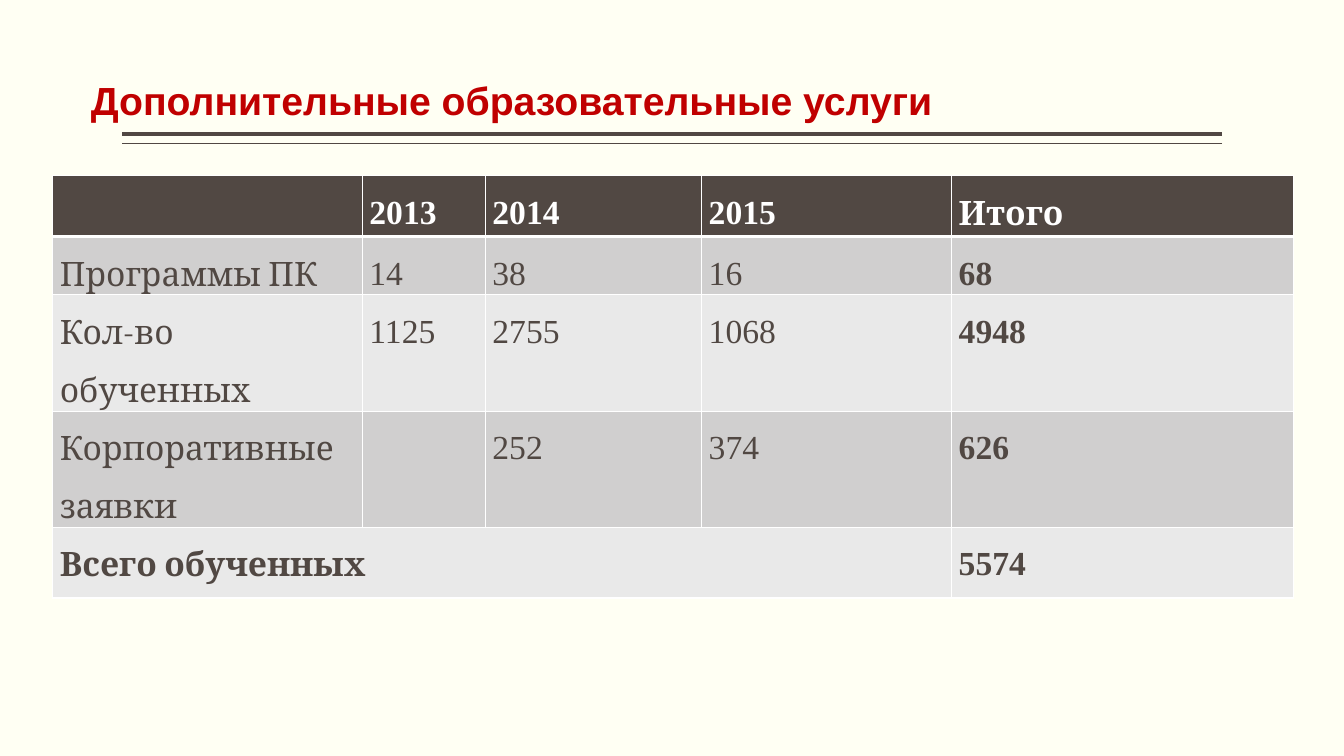
from lxml.etree import SubElement
from pptx import Presentation
from pptx.dml.color import RGBColor
from pptx.enum.text import MSO_ANCHOR, MSO_AUTO_SIZE, PP_ALIGN
from pptx.enum.shapes import MSO_CONNECTOR
from pptx.oxml.ns import qn
from pptx.util import Cm, Pt

CREAM = RGBColor(0xFF, 0xFF, 0xF3)
BROWN = RGBColor(0x51, 0x48, 0x43)
RED = RGBColor(0xC0, 0x00, 0x00)
WHITE = RGBColor(0xFF, 0xFF, 0xFF)
DARK_BAND = RGBColor(0xD0, 0xCF, 0xCF)
LIGHT_BAND = RGBColor(0xE9, 0xE9, 0xE9)

SERVICES = [
    ["", "2013", "2014", "2015", "Итого"],
    ["Программы ПК", "14", "38", "16", "68"],
    ["Кол-во обученных", "1125", "2755", "1068", "4948"],
    ["Корпоративные заявки", "", "252", "374", "626"],
    ["Всего обученных", "", "", "", "5574"],
]
COLUMN_WIDTHS = [7.8, 3.1, 5.45, 6.3, 8.62]
ROW_HEIGHTS = [1.53, 1.47, 2.93, 2.93, 1.78]


def apply(target, values):
    for name, value in values.items():
        setattr(target, name, value)


class ServicesSlide:
    """Holds the style and the current slide."""

    heading_font = "Arial"
    word_font = "Cambria"
    number_font = "Times New Roman"

    def __init__(self, presentation):
        self.slide = presentation.slides.add_slide(presentation.slide_layouts[5])
        self.slide.background.fill.solid()
        self.slide.background.fill.fore_color.rgb = CREAM

    def label(self, frame, text, font, size, color, bold, **paragraph_format):
        paragraph = frame.paragraphs[0]
        apply(paragraph, paragraph_format)
        run = paragraph.add_run()
        run.text = text
        apply(run.font, {"name": font, "size": Pt(size), "bold": bold})
        run.font.color.rgb = color

    def title(self, text, left, top, width, height):
        heading = self.slide.shapes.title
        apply(heading, {"left": Cm(left), "top": Cm(top),
                        "width": Cm(width), "height": Cm(height)})
        apply(heading.text_frame, {
            "vertical_anchor": MSO_ANCHOR.BOTTOM, "word_wrap": True,
            "auto_size": MSO_AUTO_SIZE.NONE, "margin_left": 0, "margin_right": 0,
        })
        self.label(heading.text_frame, text, self.heading_font, 28, RED, True,
                   alignment=PP_ALIGN.LEFT, line_spacing=0.9)

    def rule(self, left, right, y, weight):
        rule = self.slide.shapes.add_connector(
            MSO_CONNECTOR.STRAIGHT, Cm(right), Cm(y), Cm(left), Cm(y))
        rule.line.color.rgb = BROWN
        rule.line.width = Pt(weight)
        SubElement(rule._element.spPr, qn("a:effectLst"))

    def borders(self, cell, top, bottom):
        properties = cell._tc.get_or_add_tcPr()
        for side, weight in {"L": 1, "R": 1, "T": top, "B": bottom}.items():
            edge = SubElement(properties, qn(f"a:ln{side}"), w=str(Pt(weight)))
            paint = SubElement(edge, qn("a:solidFill"))
            SubElement(paint, qn("a:srgbClr"), val=str(WHITE))

    def cell(self, cell, text, row, column):
        header = row == 0
        last_column = len(COLUMN_WIDTHS) - 1
        last_row = len(ROW_HEIGHTS) - 1
        apply(cell, {"margin_left": Cm(0.18), "margin_right": Cm(0.18),
                     "margin_top": 0, "margin_bottom": 0})
        self.borders(cell, top=3 if row == 1 else 1, bottom=3 if header else 1)
        cell.fill.solid()
        cell.fill.fore_color.rgb = (
            BROWN if header else DARK_BAND if row % 2 else LIGHT_BAND)
        if text:
            self.label(cell.text_frame, text,
                       self.number_font if text.isdigit() else self.word_font,
                       24, WHITE if header else BROWN,
                       header or row == last_row or column == last_column,
                       alignment=PP_ALIGN.JUSTIFY, line_spacing=1.5)

    def table(self, rows, left, top):
        table = self.slide.shapes.add_table(
            len(rows), len(rows[0]), Cm(left), Cm(top),
            Cm(sum(COLUMN_WIDTHS)), Cm(sum(ROW_HEIGHTS))).table
        for column, width in zip(table.columns, COLUMN_WIDTHS):
            column.width = Cm(width)
        for row, height in zip(table.rows, ROW_HEIGHTS):
            row.height = Cm(height)
        for r, values in enumerate(rows):
            for c, text in enumerate(values):
                self.cell(table.cell(r, c), text, r, c)
        # The total label spans everything left of the sum
        last = len(rows) - 1
        table.cell(last, 0).merge(table.cell(last, len(rows[0]) - 2))


def main():
    presentation = Presentation()
    apply(presentation, {"slide_width": Cm(33.87), "slide_height": Cm(19.05)})
    page = ServicesSlide(presentation)

    # Heading with its double rule
    page.title("Дополнительные образовательные услуги", 2.29, 0.2, 31.37, 3.05)
    for y, weight in ((3.38, 3), (3.62, 1)):
        page.rule(3.07, 30.8, y, weight)

    # Services by year
    page.table(SERVICES, 1.33, 4.43)

    presentation.save("out.pptx")


if __name__ == "__main__":
    main()
